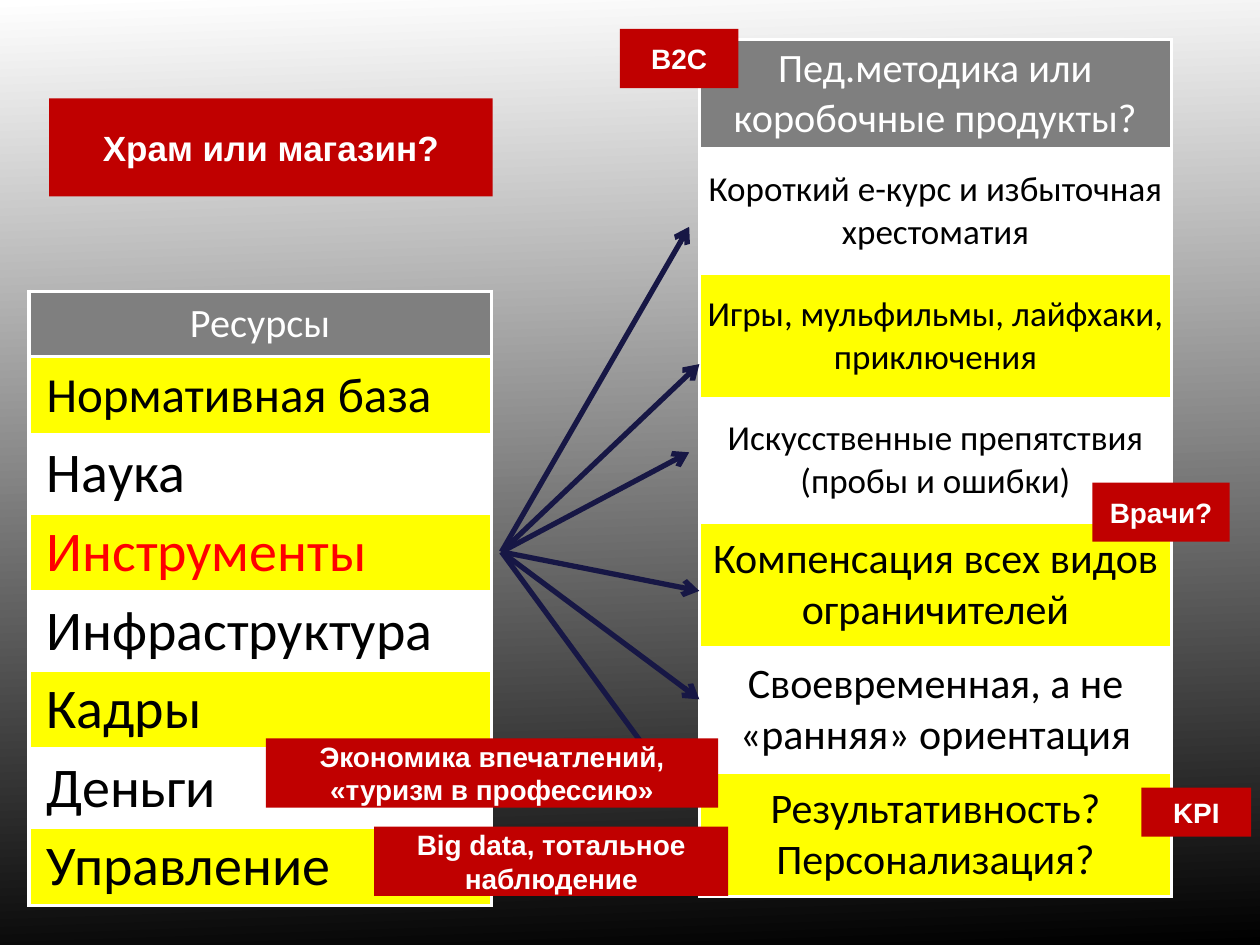
from lxml.etree import SubElement, fromstring
from pptx import Presentation
from pptx.dml.color import RGBColor
from pptx.enum.shapes import MSO_CONNECTOR, MSO_SHAPE
from pptx.enum.text import MSO_ANCHOR, PP_ALIGN
from pptx.oxml.ns import nsdecls, qn
from pptx.util import Inches, Pt

WHITE, BLACK, GRAY = "FFFFFF", "000000", "7F7F7F"
YELLOW, RED, DARK_RED, NAVY = "FFFF00", "FF0000", "C00000", "171745"


def rgb(color):
    return RGBColor.from_string(color)


def write_text(text_frame, text, *, size, color=WHITE, font="Arial",
               bold=False, align=PP_ALIGN.CENTER):
    text_frame.text = text
    text_frame.word_wrap = True
    for paragraph in text_frame.paragraphs:
        paragraph.alignment = align
        for run in paragraph.runs:
            run.font.name = font
            run.font.size = Pt(size)
            run.font.bold = bold
            run.font.color.rgb = rgb(color)


presentation = Presentation()
presentation.slide_width = Inches(10)
presentation.slide_height = Inches(7.5)
slide = presentation.slides.add_slide(presentation.slide_layouts[5])

background = slide.background.fill
background.gradient()
background.gradient_angle = 272
for stop, (position, color) in zip(background.gradient_stops, [(0, WHITE), (1, BLACK)]):
    stop.position = position
    stop.color.rgb = rgb(color)

title = slide.shapes.title
title.left, title.top = Inches(0.39), Inches(0.78)
title.width, title.height = Inches(3.52), Inches(0.78)
title.fill.solid()
title.fill.fore_color.rgb = rgb(DARK_RED)
title.text_frame.vertical_anchor = MSO_ANCHOR.MIDDLE
write_text(title.text_frame, "Храм или магазин?", size=20, bold=True)

# Rows: text, size, text colour
resources = [
    ("Ресурсы", 23, WHITE),
    ("Нормативная база", 28, BLACK),
    ("Наука", 32, BLACK),
    ("Инструменты", 32, RED),
    ("Инфраструктура", 32, BLACK),
    ("Кадры", 32, BLACK),
    ("Деньги", 32, BLACK),
    ("Управление", 32, BLACK),
]
products = [
    ("Пед.методика или коробочные продукты?", 23, WHITE),
    ("Короткий е-курс и избыточная хрестоматия", 20, BLACK),
    ("Игры, мульфильмы, лайфхаки, приключения", 20, BLACK),
    ("Искусственные препятствия (пробы и ошибки)", 20, BLACK),
    ("Компенсация всех видов ограничителей", 24, BLACK),
    ("Своевременная, а не «ранняя» ориентация", 24, BLACK),
    ("Результативность?\nПерсонализация?", 24, BLACK),
]
# Tables: rows, left, top, width, header height, row height, body alignment,
# body left margin, fills of odd and even body rows
tables = [
    (resources, 0.23, 2.31, 3.67, 0.52, 0.62, PP_ALIGN.LEFT, 0.14, (YELLOW, WHITE)),
    (products, 5.55, 0.31, 3.75, 0.87, 0.99, PP_ALIGN.CENTER, 0.04, (WHITE, YELLOW)),
]
for rows, left, top, width, header, body, align, indent, fills in tables:
    height = header + body * (len(rows) - 1)
    table = slide.shapes.add_table(len(rows), 1, Inches(left), Inches(top),
                                   Inches(width), Inches(height)).table
    table.first_row = table.horz_banding = False
    for index, (text, size, color) in enumerate(rows):
        is_header = index == 0
        table.rows[index].height = Inches(header if is_header else body)
        cell = table.cell(index, 0)
        cell.vertical_anchor = MSO_ANCHOR.MIDDLE
        cell.margin_top = cell.margin_bottom = cell.margin_right = Inches(0.04)
        cell.margin_left = Inches(0.04 if is_header else indent)
        cell.fill.solid()
        cell.fill.fore_color.rgb = rgb(GRAY if is_header else fills[(index - 1) % 2])
        write_text(cell.text_frame, text, size=size, color=color, font="Calibri",
                   align=PP_ALIGN.CENTER if is_header else align)
        properties = cell._tc.get_or_add_tcPr()
        for place, side in enumerate(["lnL", "lnR", "lnT", "lnB"]):
            properties.insert(place, fromstring(
                f'<a:{side} {nsdecls("a")} w="{Pt(2)}"><a:solidFill>'
                f'<a:srgbClr val="{WHITE}"/></a:solidFill></a:{side}>'))

for end_x, end_y in [(5.47, 1.8), (5.55, 2.89), (5.47, 3.59),
                     (5.55, 4.69), (5.55, 5.55), (5.47, 6.41)]:
    arrow = slide.shapes.add_connector(MSO_CONNECTOR.STRAIGHT, Inches(3.98), Inches(4.38),
                                       Inches(end_x), Inches(end_y))
    arrow.line.color.rgb = rgb(NAVY)
    arrow.line.width = Pt(3)
    SubElement(arrow.line._get_or_add_ln(), qn("a:tailEnd"), type="arrow")
    SubElement(arrow._element.spPr, qn("a:effectLst"))

labels = [
    ("Big data, тотальное наблюдение", 2.97, 6.56, 2.81, 0.55),
    ("B2С", 4.92, 0.23, 0.94, 0.47),
    ("Экономика впечатлений, «туризм в профессию»", 2.11, 5.86, 3.59, 0.55),
    ("Врачи?", 8.67, 3.83, 1.09, 0.47),
    ("KPI", 9.06, 6.25, 0.87, 0.39),
]
for text, *box in labels:
    label = slide.shapes.add_shape(MSO_SHAPE.RECTANGLE, *map(Inches, box))
    label.shadow.inherit = False
    label.fill.solid()
    label.fill.fore_color.rgb = rgb(DARK_RED)
    label.line.fill.background()
    label.text_frame.vertical_anchor = MSO_ANCHOR.MIDDLE
    write_text(label.text_frame, text, size=16, bold=True)

presentation.save("out.pptx")
